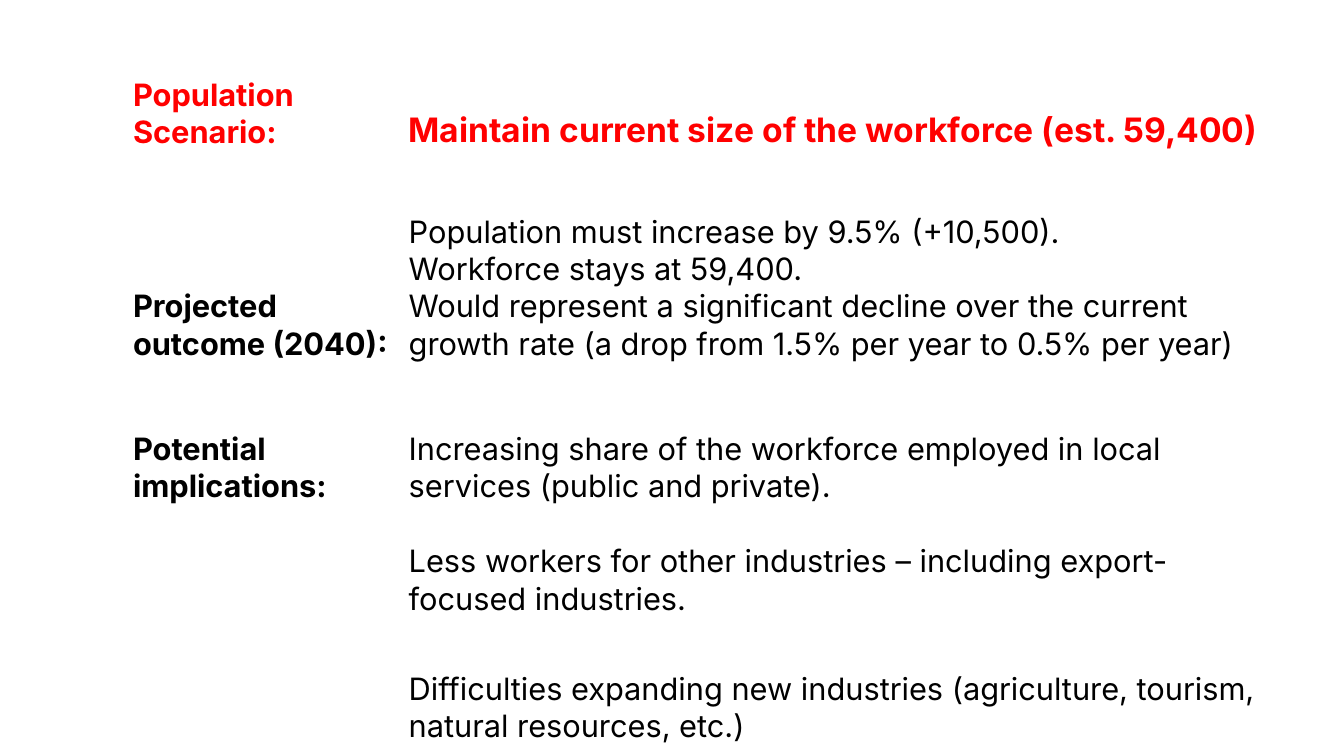
from dataclasses import dataclass

from lxml.etree import SubElement
from pptx import Presentation
from pptx.dml.color import RGBColor
from pptx.enum.text import MSO_ANCHOR
from pptx.oxml.ns import qn
from pptx.util import Pt


@dataclass(frozen=True)
class Theme:
    font: str = "Inter"
    accent: str = "FF0000"
    text: str = "000000"
    border: str = "FFFFFF"
    heading_size: int = 24
    body_size: int = 22


@dataclass(frozen=True)
class Entry:
    paragraphs: tuple = ()
    color: str = Theme.text
    size: int = Theme.body_size
    bold: bool = False


class SlideBuilder:
    """Draws styled elements on the current slide."""

    def __init__(self, slide, theme):
        self.slide = slide
        self.theme = theme

    def add_table(self, left, top, widths, heights, rows):
        frame = self.slide.shapes.add_table(
            len(heights), len(widths), Pt(left), Pt(top),
            Pt(sum(widths)), Pt(sum(heights)))
        table = frame.table
        table.first_row = False
        table.horz_banding = False
        for column, width in zip(table.columns, widths):
            column.width = Pt(width)
        for row, height, entries in zip(table.rows, heights, rows):
            row.height = Pt(height)
            for cell, entry in zip(row.cells, entries):
                self.add_borders(cell)
                self.fill_cell(cell, entry)

    def add_borders(self, cell):
        properties = cell._tc.get_or_add_tcPr()
        for side in ("L", "R", "T", "B"):
            line = SubElement(properties, qn(f"a:ln{side}"), w=str(Pt(1)))
            fill = SubElement(line, qn("a:solidFill"))
            SubElement(fill, qn("a:srgbClr"), val=self.theme.border)

    def fill_cell(self, cell, entry):
        cell.fill.background()
        cell.vertical_anchor = MSO_ANCHOR.BOTTOM
        cell.margin_left = cell.margin_right = cell.margin_top = Pt(0.72)
        cell.margin_bottom = Pt(0)
        for index, text in enumerate(entry.paragraphs):
            frame = cell.text_frame
            paragraph = frame.add_paragraph() if index else frame.paragraphs[0]
            self.add_run(paragraph, text, entry)

    def add_run(self, paragraph, text, entry):
        run = paragraph.add_run()
        run.text = text
        run.font.name = self.theme.font
        run.font.size = Pt(entry.size)
        run.font.bold = entry.bold
        run.font.color.rgb = RGBColor.from_string(entry.color)


def main():
    theme = Theme()
    presentation = Presentation()
    presentation.slide_width = Pt(960)
    presentation.slide_height = Pt(540)
    slide = presentation.slides.add_slide(presentation.slide_layouts[6])
    builder = SlideBuilder(slide, theme)

    scenario_rows = [
        (Entry(("Population Scenario:",), theme.accent, bold=True),
         Entry(("Maintain current size of the workforce (est. 59,400)",),
               theme.accent, theme.heading_size, True)),
        (Entry(("Projected outcome (2040):",), bold=True),
         Entry(("Population must increase by 9.5% (+10,500).",
                "Workforce stays at 59,400.",
                "Would represent a significant decline over the current "
                "growth rate (a drop from 1.5% per year to 0.5% per year)"))),
        (Entry(("Potential implications:",), bold=True),
         Entry(("Increasing share of the workforce employed in local "
                "services (public and private).",))),
        (Entry(),
         Entry(("Less workers for other industries – including "
                "export-focused industries.",))),
        (Entry(),
         Entry(("Difficulties expanding new industries (agriculture, "
                "tourism, natural resources, etc.)",))),
    ]
    builder.add_table(94.3, 23.8, (196.9, 620), (84, 151.2, 101.5, 80.6, 91.4),
                      scenario_rows)
    presentation.save("out.pptx")


if __name__ == "__main__":
    main()
